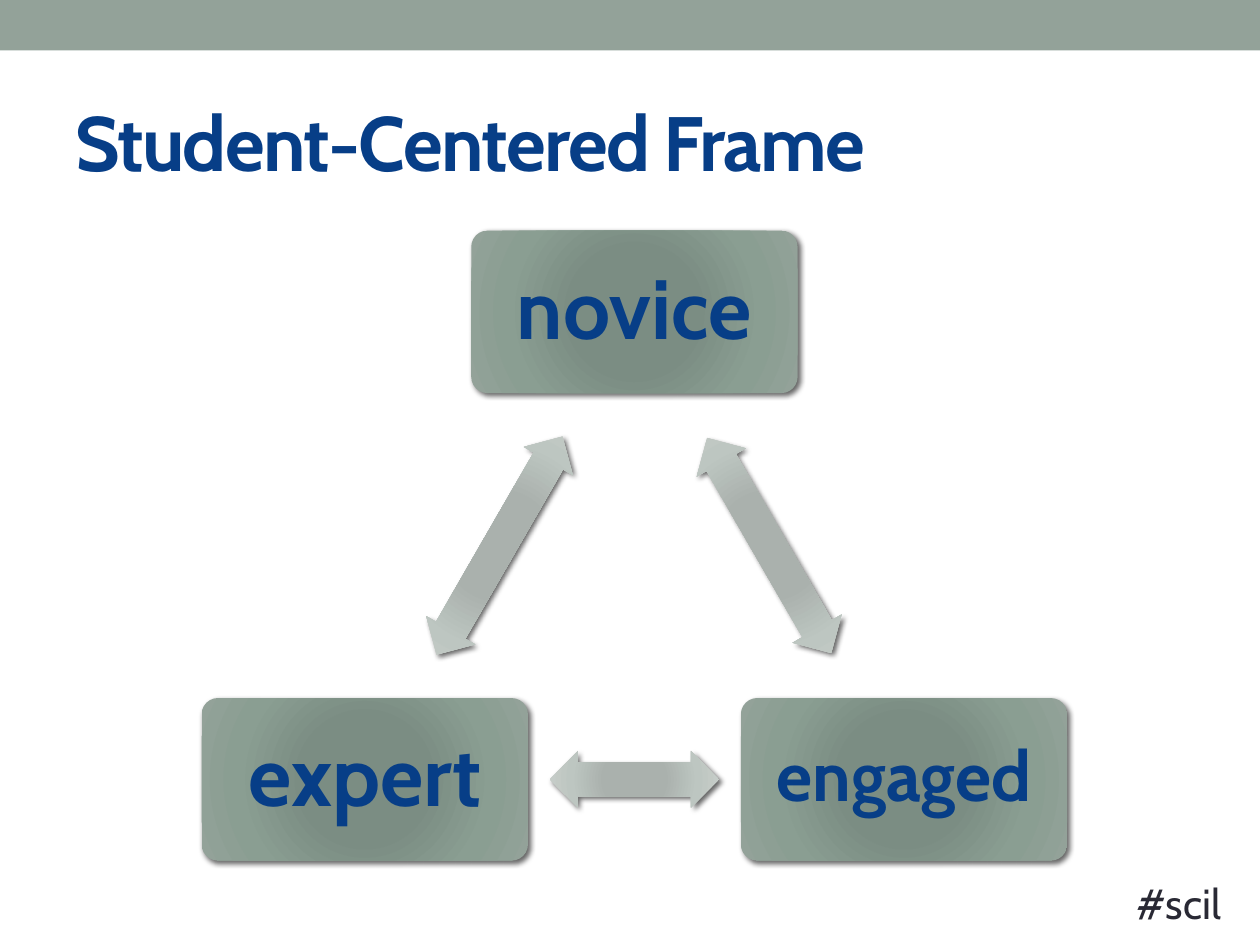
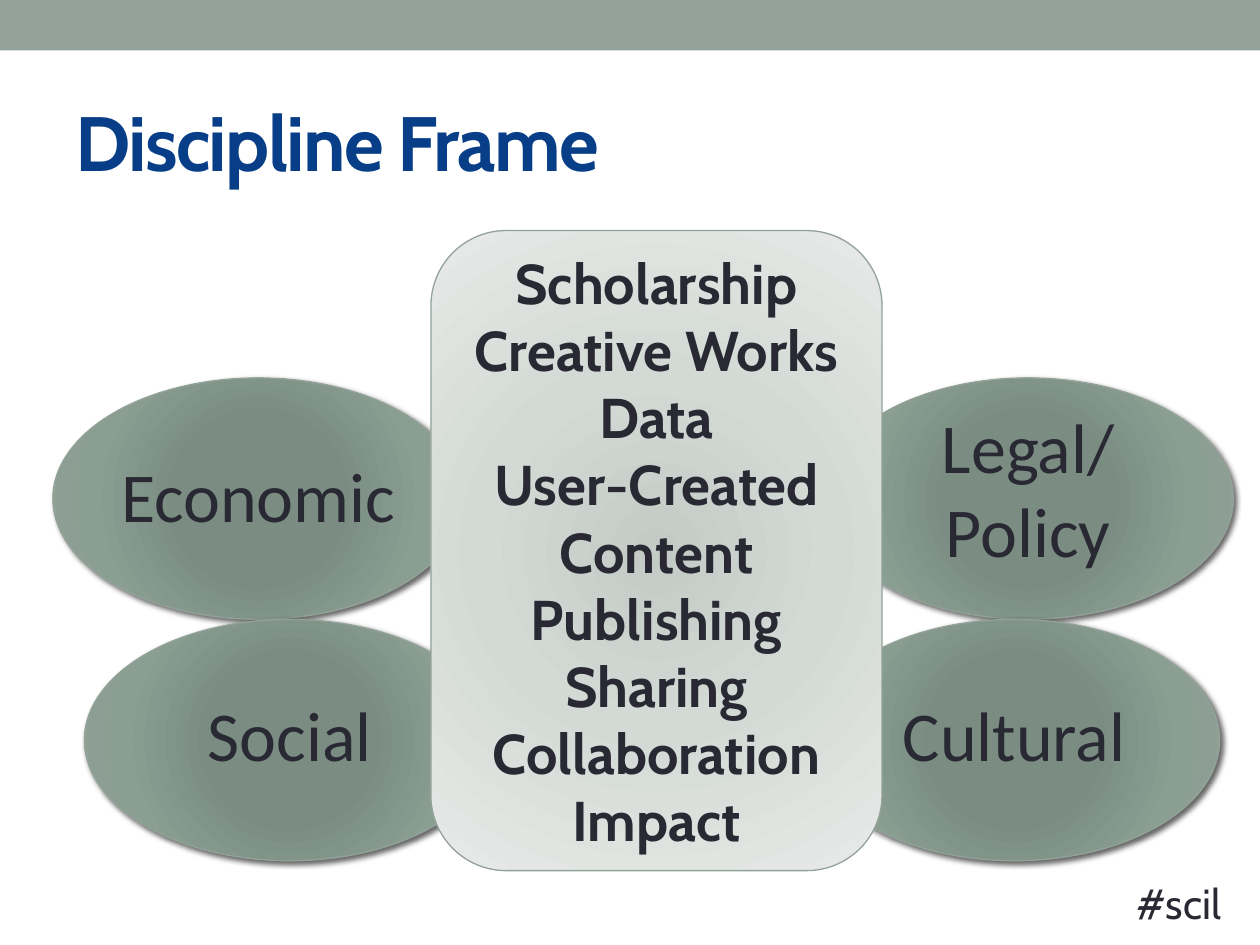
from math import atan2, degrees
from lxml.etree import SubElement as Sub
from pptx import Presentation
from pptx.dml.color import RGBColor
from pptx.enum.shapes import MSO_SHAPE as Kind
from pptx.enum.text import MSO_ANCHOR as Anchor, PP_ALIGN as Align
from pptx.oxml import parse_xml
from pptx.oxml.ns import nsdecls, qn
from pptx.util import Pt

SAGE, NAVY, INK = "93A299", "073E87", "292934"
DEEP = [(0, "7B8E82"), (34, "7B8D83"), (70, "8A9E92"), (100, SAGE)]
PALE = [(0, "AAB2AD"), (34, "AAB1AD"), (70, "BDC6C1"), (100, "C8CECA")]
MIST = [(0, "C4CAC6"), (45, "D3DAD6"), (100, "E7EAE8")]

WIDE, HIGH = 720, 540
BAND = 28.8
TITLE = (36, 41.76, 648, 77.76)
TAG = (642.24, 498, 72, 36)

CARD = (186.48, 92.88)
CARDS = [
    ("novice", 48, 14.4, (269.28, 131.76)),
    ("engaged", 40, 12.24, (423.36, 398.88)),
    ("expert", 48, 14.4, (115.2, 398.88)),
]
SPANS = [142, 97, 144]
THICK = 32.4

OVAL = (234.72, 137.88)
LABEL = 182.88
FORCES = [
    ("Economic", (30.24, 216), 254.88, 55.44),
    ("Legal/Policy", (470.16, 216), 226.8, 104.4),
    ("Social", (48.24, 354), 391.68, 55.44),
    ("Cultural", (462.24, 354), 391.68, 55.44),
]
PANEL = (246.24, 131.76, 257.76, 365.76)
LIST = (252, 138.24, 246.24, 356.4)
TOPICS = ["Scholarship", "Creative Works", "Data", "User-Created Content",
          "Publishing", "Sharing", "Collaboration", "Impact"]


def tint(code):
    return RGBColor.from_string(code)


def shade(shape, stops):
    fill = parse_xml(f'<a:gradFill {nsdecls("a")} rotWithShape="1"><a:gsLst/>'
                     '<a:path path="circle"><a:fillToRect l="100000" t="100000"'
                     ' r="100000" b="100000"/></a:path></a:gradFill>')
    for spot, code in stops:
        stop = Sub(fill[0], qn("a:gs"), pos=str(spot * 1000))
        Sub(stop, qn("a:srgbClr"), val=code)
    shape.fill.solid()
    props = shape.element.spPr
    props.replace(props.find(qn("a:solidFill")), fill)


def cast(shape):
    glow = Sub(shape.element.spPr.find(qn("a:effectLst")), qn("a:outerShdw"),
               blurRad=str(Pt(3)), dist=str(Pt(2)), dir="2700000", rotWithShape="0")
    hue = Sub(glow, qn("a:srgbClr"), val="000000")
    Sub(hue, qn("a:alpha"), val="60000")


def draw(slide, kind, box, fill, edge=None, drop=True):
    shape = slide.shapes.add_shape(kind, *map(Pt, box))
    shape.shadow.inherit = False
    if isinstance(fill, str):
        shape.fill.solid()
        shape.fill.fore_color.rgb = tint(fill)
    else:
        shade(shape, fill)
    if edge:
        shape.line.color.rgb = tint(edge)
        shape.line.width = Pt(0.75)
    else:
        shape.line.fill.background()
    if drop:
        cast(shape)
    return shape


def write(shape, words, size, code, font="Cabin", bold=False, align=Align.CENTER):
    frame = shape.text_frame
    frame.word_wrap = True
    frame.text = words
    for par in frame.paragraphs:
        par.alignment = align
        for run in par.runs:
            run.font.name = font
            run.font.size = Pt(size)
            run.font.bold = bold
            run.font.color.rgb = tint(code)
    return frame


def note(slide, box, *args, **style):
    return write(slide.shapes.add_textbox(*map(Pt, box)), *args, **style)


def start(deck, title):
    slide = deck.slides.add_slide(deck.slide_layouts[6])
    draw(slide, Kind.RECTANGLE, (0, 0, WIDE, BAND), SAGE, drop=False)
    frame = note(slide, TITLE, title, 44, NAVY, bold=True, align=Align.LEFT)
    frame.vertical_anchor = Anchor.MIDDLE
    frame.paragraphs[0].runs[0].font._element.set("spc", "-100")
    note(slide, TAG, "#scil", 24, INK, align=Align.LEFT)
    return slide


def students(deck):
    slide = start(deck, "Student-Centered Frame")
    spots = []
    for word, size, pad, (left, top) in CARDS:
        card = draw(slide, Kind.ROUNDED_RECTANGLE, (left, top, *CARD), DEEP)
        card.adjustments[0] = 0.1
        frame = write(card, word, size, NAVY, bold=True)
        frame.vertical_anchor = Anchor.MIDDLE
        frame.margin_left = frame.margin_right = Pt(pad)
        frame.margin_top = frame.margin_bottom = Pt(pad)
        frame.paragraphs[0].line_spacing = 0.9
        spots.append((left + CARD[0] / 2, top + CARD[1] / 2))
    for (ax, ay), (bx, by), span in zip(spots, spots[1:] + spots[:1], SPANS):
        box = ((ax + bx - span) / 2, (ay + by - THICK) / 2, span, THICK)
        arrow = draw(slide, Kind.LEFT_RIGHT_ARROW, box, PALE)
        arrow.adjustments[0] = 0.6
        arrow.adjustments[1] = 0.5
        arrow.rotation = degrees(atan2(by - ay, bx - ax)) % 360


def fields(deck):
    slide = start(deck, "Discipline Frame")
    for word, (left, top), line, tall in FORCES:
        draw(slide, Kind.OVAL, (left, top, *OVAL), DEEP, SAGE)
        box = (left + (OVAL[0] - LABEL) / 2, line, LABEL, tall)
        note(slide, box, word, 40, INK, font="Calibri")
    draw(slide, Kind.ROUNDED_RECTANGLE, PANEL, MIST, SAGE, drop=False)
    note(slide, LIST, "\n".join(TOPICS), 32, INK, bold=True)


def main():
    deck = Presentation()
    deck.slide_width, deck.slide_height = Pt(WIDE), Pt(HIGH)
    students(deck)
    fields(deck)
    deck.save("out.pptx")


if __name__ == "__main__":
    main()
